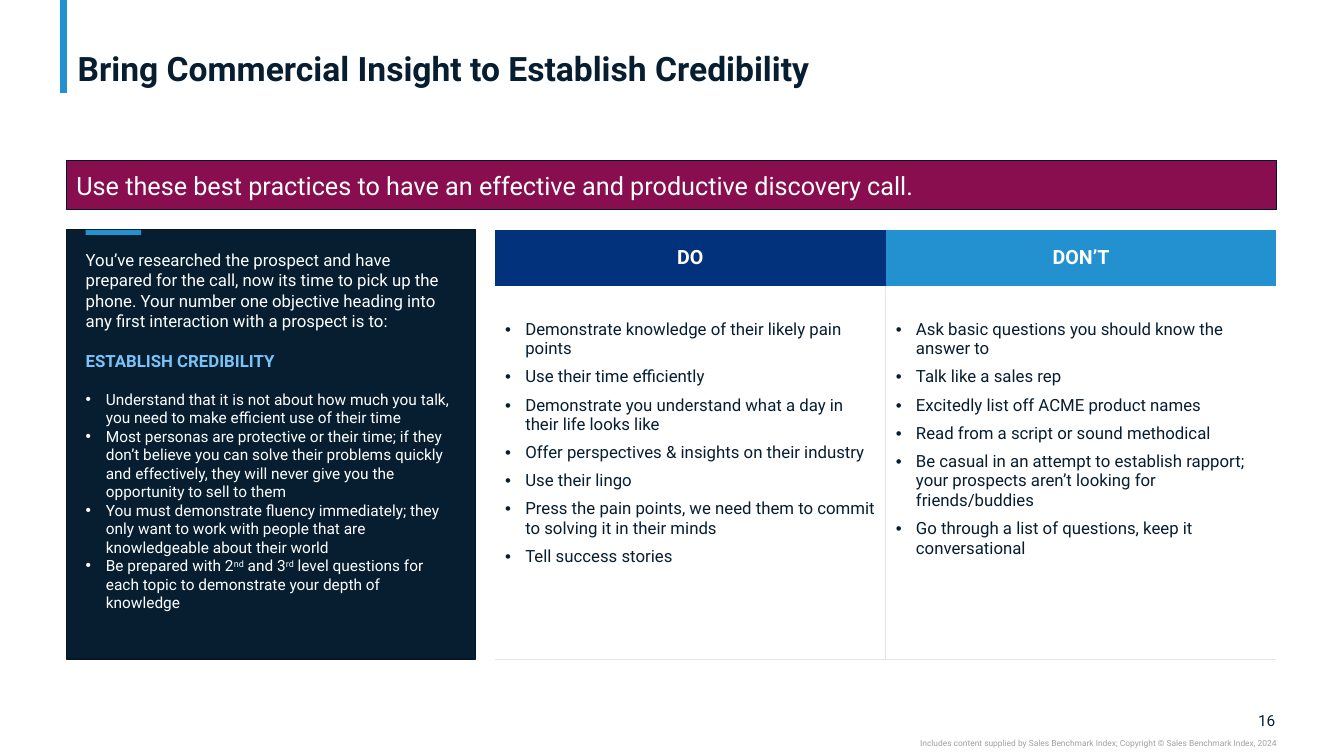
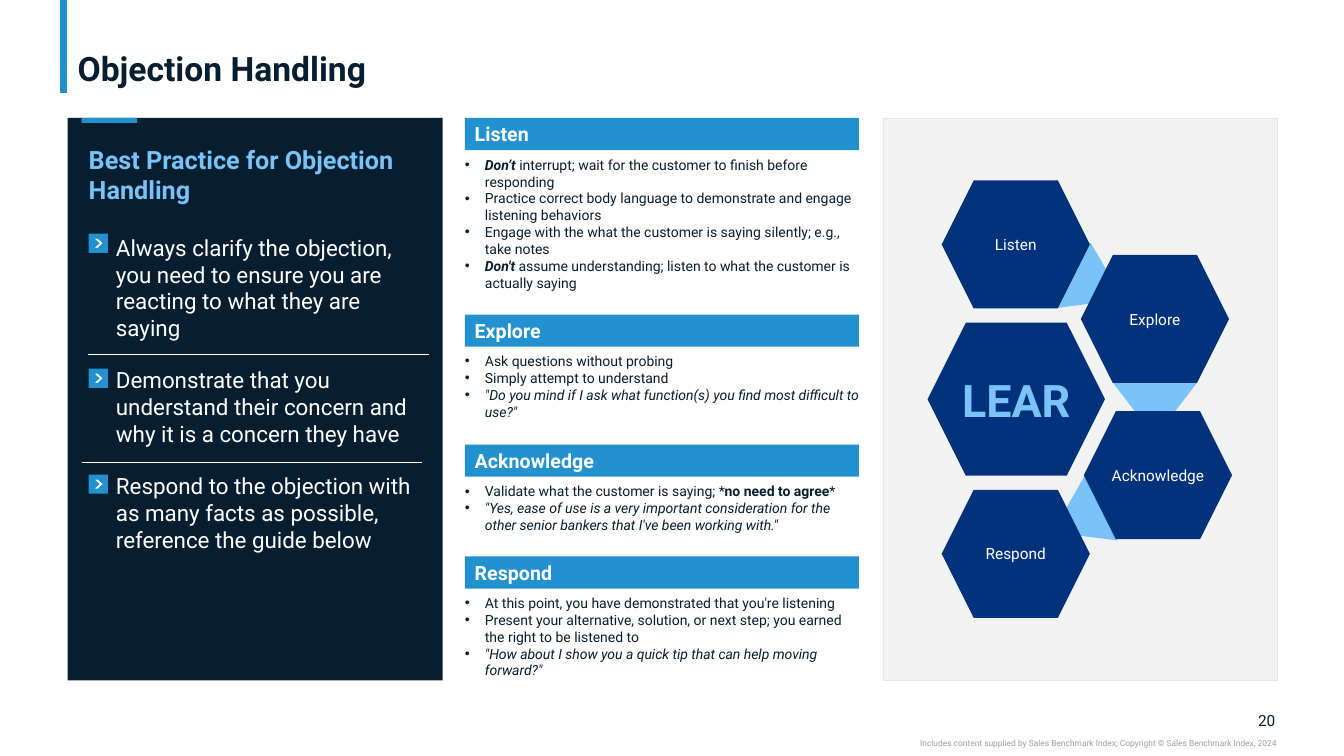
"""Build two sales coaching slides: discovery call practices and objection handling."""
from dataclasses import dataclass
from typing import Optional

from lxml import etree
from pptx import Presentation
from pptx import util as u
from pptx.dml.color import RGBColor
from pptx.enum import shapes, text
from pptx.oxml.ns import qn

NAVY = RGBColor(0x07, 0x1E, 0x31)
EDGE = RGBColor(0x05, 0x16, 0x24)
ROYAL = RGBColor(0x03, 0x32, 0x7C)
BLUE = RGBColor(0x23, 0x91, 0xCF)
SKY = RGBColor(0x7A, 0xC3, 0xF8)
PLUM = RGBColor(0x88, 0x0E, 0x4F)
GREY = RGBColor(0xA0, 0xA0, 0xA0)
RULE = RGBColor(0xE7, 0xE6, 0xE6)
PALE = RGBColor(0xF2, 0xF2, 0xF2)
WHITE = RGBColor(0xFF, 0xFF, 0xFF)

FONT = "Roboto"
NO_GRID_STYLE = "{2D5ABB26-0587-4C30-8999-92F81FD0307C}"
COPYRIGHT = "Includes content supplied by Sales Benchmark Index; Copyright © Sales Benchmark Index, 2024"
LEFT, CENTER, RIGHT = text.PP_ALIGN.LEFT, text.PP_ALIGN.CENTER, text.PP_ALIGN.RIGHT
TOP, MIDDLE, BOTTOM = text.MSO_ANCHOR.TOP, text.MSO_ANCHOR.MIDDLE, text.MSO_ANCHOR.BOTTOM
SHAPE = shapes.MSO_SHAPE


@dataclass(frozen=True)
class Area:
    """A rectangle on the page, in inches."""
    left: float
    top: float
    width: float
    height: float

    def lengths(self) -> tuple:
        """Return left, top, width and height as lengths."""
        return tuple(u.Inches(v) for v in (self.left, self.top, self.width, self.height))


@dataclass(frozen=True)
class Span:
    """A stretch of text with its own emphasis."""
    words: str
    bold: Optional[bool] = None
    italic: Optional[bool] = None
    raised: bool = False


@dataclass(frozen=True)
class Para:
    """A paragraph with one size and colour."""
    spans: tuple
    size: float
    color: RGBColor
    bold: bool = False
    align: text.PP_ALIGN = LEFT
    bullet: bool = False
    before: float = 0
    after: float = 0
    line: Optional[float] = None


@dataclass(frozen=True)
class Section:
    """A banded heading with its bullet list."""
    name: str
    top: float
    height: float
    items: tuple


@dataclass(frozen=True)
class Column:
    """A table column with a coloured heading."""
    name: str
    fill: RGBColor
    items: tuple


@dataclass(frozen=True)
class Figure:
    """A hexagon or a rotated triangle of the diagram."""
    area: Area
    label: str = ""
    turn: float = 0


def plain(words: str, size: float, color: RGBColor, **style) -> Para:
    """Return a paragraph made of a single span."""
    return Para((Span(words),), size, color, **style)


def bullets(items: tuple, size: float, color: RGBColor, after: float = 0) -> list[Para]:
    """Return bulleted paragraphs for strings or tuples of spans."""
    return [Para((Span(item),) if isinstance(item, str) else item, size, color, bullet=True, after=after)
            for item in items]


def write(frame, paras: list[Para]) -> None:
    """Fill a text frame with paragraphs."""
    for index, para in enumerate(paras):
        line = frame.add_paragraph() if index else frame.paragraphs[0]
        settings = line._p.get_or_add_pPr()
        indent = u.Inches(0.2) if para.bullet else 0
        settings.set("marL", str(indent))
        settings.set("indent", str(-indent))
        if para.bullet:
            etree.SubElement(settings, qn("a:buFont"), typeface="Arial")
            etree.SubElement(settings, qn("a:buChar"), char="•")
        else:
            etree.SubElement(settings, qn("a:buNone"))
        line.alignment = para.align
        line.space_before, line.space_after = u.Pt(para.before), u.Pt(para.after)
        if para.line:
            line.line_spacing = para.line
        line.font.name, line.font.size, line.font.bold = FONT, u.Pt(para.size), para.bold
        line.font.color.rgb = para.color
        for span in para.spans:
            run = line.add_run()
            run.text = span.words
            if span.bold is not None:
                run.font.bold = span.bold
            if span.italic is not None:
                run.font.italic = span.italic
            if span.raised:
                run._r.get_or_add_rPr().set("baseline", "30000")


def set_frame(frame, anchor: text.MSO_ANCHOR, side: float = 0, edge: float = 0) -> None:
    """Set wrapping, anchor and margins of a text frame."""
    frame.word_wrap, frame.auto_size, frame.vertical_anchor = True, text.MSO_AUTO_SIZE.NONE, anchor
    frame.margin_left = frame.margin_right = u.Inches(side)
    frame.margin_top = frame.margin_bottom = u.Inches(edge)


def add_text(page, area: Area, paras: list[Para], anchor: text.MSO_ANCHOR = TOP) -> None:
    """Add a text box without margins."""
    box = page.shapes.add_textbox(*area.lengths())
    set_frame(box.text_frame, anchor)
    write(box.text_frame, paras)


def fill_placeholder(page, index: int, area: Area, paras: list[Para],
                     anchor: text.MSO_ANCHOR = TOP, side: float = 0) -> None:
    """Move a placeholder to the front and fill it."""
    box = page.placeholders[index]
    box.left, box.top, box.width, box.height = area.lengths()
    set_frame(box.text_frame, anchor, side)
    write(box.text_frame, paras)
    page.shapes._spTree.append(box._element)


def paint(shape, fill: RGBColor, line: Optional[RGBColor] = None, weight: float = 1) -> None:
    """Set fill and outline and drop the shadow."""
    shape.shadow.inherit = False
    shape.fill.solid()
    shape.fill.fore_color.rgb = fill
    if line is None:
        shape.line.fill.background()
    else:
        shape.line.color.rgb, shape.line.width = line, u.Pt(weight)


def add_block(page, area: Area, fill: RGBColor, line: Optional[RGBColor] = None, weight: float = 1,
              kind: shapes.MSO_SHAPE = SHAPE.RECTANGLE):
    """Add a filled preset shape."""
    shape = page.shapes.add_shape(kind, *area.lengths())
    paint(shape, fill, line, weight)
    return shape


def add_band(page, area: Area, para: Para, fill: RGBColor, line: Optional[RGBColor] = None) -> None:
    """Add a filled band holding one line of text."""
    band = add_block(page, area, fill, line)
    set_frame(band.text_frame, MIDDLE, 0.1, 0.05)
    write(band.text_frame, [para])


def add_line(page, start: tuple, end: tuple, color: RGBColor, weight: float) -> None:
    """Add a straight line between two points."""
    line = page.shapes.add_connector(shapes.MSO_CONNECTOR.STRAIGHT, *(u.Inches(v) for v in start + end))
    line.line.color.rgb, line.line.width = color, u.Pt(weight)
    etree.SubElement(line._element.spPr, qn("a:effectLst"))


def add_page(deck, title: str, number: int):
    """Add a page with the shared title, accent line and footer."""
    page = deck.slides.add_slide(deck.slide_layouts[1])
    add_line(page, (0.63, 0), (0.63, 0.92), BLUE, 5)
    add_text(page, Area(12.32, 7.05, 0.33, 0.19), [plain(str(number), 11, NAVY, align=RIGHT)], MIDDLE)
    add_text(page, Area(7.5, 7.32, 5.16, 0.1), [plain(COPYRIGHT, 6, GREY, align=RIGHT)])
    fill_placeholder(page, 0, Area(0.67, 0.04, 11.99, 0.84),
                     [plain(title, 24, NAVY, bold=True, line=0.9)], BOTTOM, 0.1)
    return page


def add_panel(page, area: Area, tab_left: float, line: Optional[RGBColor] = None) -> None:
    """Add a dark panel with a blue tab at its top."""
    add_block(page, area, NAVY, line)
    add_block(page, Area(tab_left, area.top, 0.55, 0.05), BLUE)


def add_border(cell, sides: tuple) -> None:
    """Draw thin borders on the named sides of a cell."""
    settings = cell._tc.get_or_add_tcPr()
    for index, side in enumerate(sides):
        border = etree.Element(qn(f"a:ln{side}"), w=str(u.Pt(0.5)))
        fill = etree.SubElement(border, qn("a:solidFill"))
        etree.SubElement(fill, qn("a:srgbClr"), val=str(RULE))
        settings.insert(index, border)


def add_comparison(page, area: Area, columns: tuple) -> None:
    """Add the table of headed bullet columns."""
    table = page.shapes.add_table(2, len(columns), *area.lengths()).table
    table.first_row = table.horz_banding = False
    table._tbl.tblPr.find(qn("a:tableStyleId")).text = NO_GRID_STYLE
    table.rows[0].height, table.rows[1].height = u.Inches(0.56), u.Inches(area.height - 0.56)
    for index, column in enumerate(columns):
        head, body = table.cell(0, index), table.cell(1, index)
        head.fill.solid()
        head.fill.fore_color.rgb = column.fill
        head.vertical_anchor = MIDDLE
        write(head.text_frame, [plain(column.name, 14, WHITE, bold=True, align=CENTER)])
        body.fill.background()
        body.margin_top = u.Inches(0.33)
        write(body.text_frame, bullets(column.items, 12, NAVY, after=6))
        add_border(body, ("L" if index else "R", "B"))


def add_arrow_icon(page, left: float, top: float) -> None:
    """Add a blue square with a white chevron cut out."""
    add_block(page, Area(left + 0.02, top + 0.02, 0.15, 0.15), WHITE)
    x, y = round(left * 1000), round(top * 1000)
    builder = page.shapes.build_freeform(x, y, scale=u.Inches(0.001))
    builder.add_line_segments([(x + 190, y), (x + 190, y + 190), (x, y + 190)])
    chevron = [(x + a, y + b) for a, b in ((60, 50), (90, 50), (140, 95), (90, 140), (60, 140), (110, 95))]
    builder.move_to(*chevron[0])
    builder.add_line_segments(chevron[1:])
    paint(builder.convert_to_shape(), BLUE)


def add_section(page, section: Section) -> None:
    """Add a heading band and the list under it."""
    add_band(page, Area(4.61, section.top, 3.91, 0.32), plain(section.name, 14, WHITE, bold=True), BLUE)
    add_text(page, Area(4.61, section.top + 0.38, 3.91, section.height), bullets(section.items, 10, NAVY))


def add_hexagon(page, figure: Figure, para: Para) -> None:
    """Add a labelled hexagon."""
    hexagon = add_block(page, figure.area, ROYAL, kind=SHAPE.HEXAGON)
    set_frame(hexagon.text_frame, MIDDLE)
    write(hexagon.text_frame, [para])


CREDIBILITY = (
    "Understand that it is not about how much you talk, you need to make efficient use of their time",
    "Most personas are protective or their time; if they don’t believe you can solve their problems quickly "
    "and effectively, they will never give you the opportunity to sell to them",
    "You must demonstrate fluency immediately; they only want to work with people that are knowledgeable "
    "about their world",
    (Span("Be prepared with 2"), Span("nd", raised=True), Span(" and 3"), Span("rd", raised=True),
     Span(" level questions for each topic to demonstrate your depth of knowledge")),
)
COLUMNS = (
    Column("DO", ROYAL, (
        "Demonstrate knowledge of their likely pain points", "Use their time efficiently",
        "Demonstrate you understand what a day in their life looks like",
        "Offer perspectives & insights on their industry", "Use their lingo",
        "Press the pain points, we need them to commit to solving it in their minds", "Tell success stories")),
    Column("DON’T", BLUE, (
        "Ask basic questions you should know the answer to", "Talk like a sales rep",
        "Excitedly list off ACME product names", "Read from a script or sound methodical",
        "Be casual in an attempt to establish rapport; your prospects aren’t looking for friends/buddies",
        "Go through a list of questions, keep it conversational")),
)
PRACTICES = (
    "Always clarify the objection, you need to ensure you are reacting to what they are saying",
    "Demonstrate that you understand their concern and why it is a concern they have",
    "Respond to the objection with as many facts as possible, reference the guide below",
)
SECTIONS = (
    Section("Listen", 1.17, 1.35, (
        (Span("Don’t ", True, True), Span("interrupt; wait for the customer to finish before responding")),
        "Practice correct body language to demonstrate and engage listening behaviors",
        "Engage with the what the customer is saying silently; e.g., take notes",
        (Span("Don't", True, True), Span(" assume understanding; listen to what the customer is actually saying")))),
    Section("Explore", 3.12, 0.67, (
        "Ask questions without probing", "Simply attempt to understand",
        (Span('"Do you mind if I ask what function(s) you find most difficult to use?"', italic=True),))),
    Section("Acknowledge", 4.41, 0.5, (
        (Span("Validate what the customer is saying; *"), Span("no need to agree", True), Span("*")),
        (Span('"Yes, ease of use is a very important consideration for the other senior bankers that '
              'I\'ve been working with."', italic=True),))),
    Section("Respond", 5.52, 0.84, (
        "At this point, you have demonstrated that you're listening",
        "Present your alternative, solution, or next step; you earned the right to be listened to",
        (Span('"How about I show you a quick tip that can help moving forward?"', italic=True),))),
)
LINKS = (Figure(Area(10.54, 2.58, 0.72, 0.54), turn=116.3), Figure(Area(11.04, 3.8, 0.83, 0.54), turn=180),
         Figure(Area(10.32, 4.89, 0.72, 0.54), turn=243.4))
STEPS = tuple(Figure(Area(left, top, 1.47, 1.27), section.name) for section, (left, top) in
              zip(SECTIONS, ((9.34, 1.79), (10.72, 2.53), (10.75, 4.08), (9.34, 4.86))))
HUB = Figure(Area(9.2, 3.2, 1.76, 1.52), "LEAR")


def build_discovery(deck) -> None:
    """Build the discovery call page."""
    page = add_page(deck, "Bring Commercial Insight to Establish Credibility", 16)
    add_panel(page, Area(0.66, 2.28, 4.06, 4.26), 0.85, EDGE)
    opening = ("You’ve researched the prospect and have prepared for the call, now its time to pick up the phone. "
               "Your number one objective heading into any first interaction with a prospect is to:")
    fill_placeholder(page, 1, Area(0.85, 2.48, 3.66, 3.64), [
        plain(opening, 12, WHITE),
        plain("ESTABLISH CREDIBILITY", 12, SKY, bold=True, before=14, after=14),
        *bullets(CREDIBILITY, 11, WHITE)])
    add_comparison(page, Area(4.91, 2.28, 7.75, 4.26), COLUMNS)
    add_band(page, Area(0.66, 1.59, 12, 0.49), plain(
        "Use these best practices to have an effective and productive discovery call.", 18, WHITE), PLUM, EDGE)


def build_objections(deck) -> None:
    """Build the objection handling page."""
    page = add_page(deck, "Objection Handling", 20)
    add_panel(page, Area(0.67, 1.17, 3.72, 5.58), 0.81)
    add_text(page, Area(0.88, 1.43, 3.12, 0.61),
             [plain("Best Practice for Objection Handling", 18, SKY, bold=True)])
    fill_placeholder(page, 1, Area(1.15, 2.32, 3.1, 3.47),
                     [plain(words, 16, WHITE, after=18) for words in PRACTICES])
    for top in (2.32, 3.66, 4.71):
        add_arrow_icon(page, 0.88, top)
    for left, top in ((0.87, 3.52), (0.81, 4.59)):
        add_line(page, (left, top), (left + 3.38, top), WHITE, 0.5)
    for section in SECTIONS:
        add_section(page, section)
    add_block(page, Area(8.76, 1.17, 3.91, 5.58), PALE, RULE, 0.5)
    for link in LINKS:
        add_block(page, link.area, SKY, kind=SHAPE.ISOSCELES_TRIANGLE).rotation = link.turn
    add_hexagon(page, HUB, plain(HUB.label, 32, SKY, bold=True, align=CENTER))
    for step in STEPS:
        add_hexagon(page, step, plain(step.label, 11, WHITE, align=CENTER))


def main() -> None:
    """Build and save the deck."""
    deck = Presentation()
    deck.slide_width, deck.slide_height = u.Inches(13.33), u.Inches(7.5)
    build_discovery(deck)
    build_objections(deck)
    deck.save("out.pptx")


if __name__ == "__main__":
    main()
